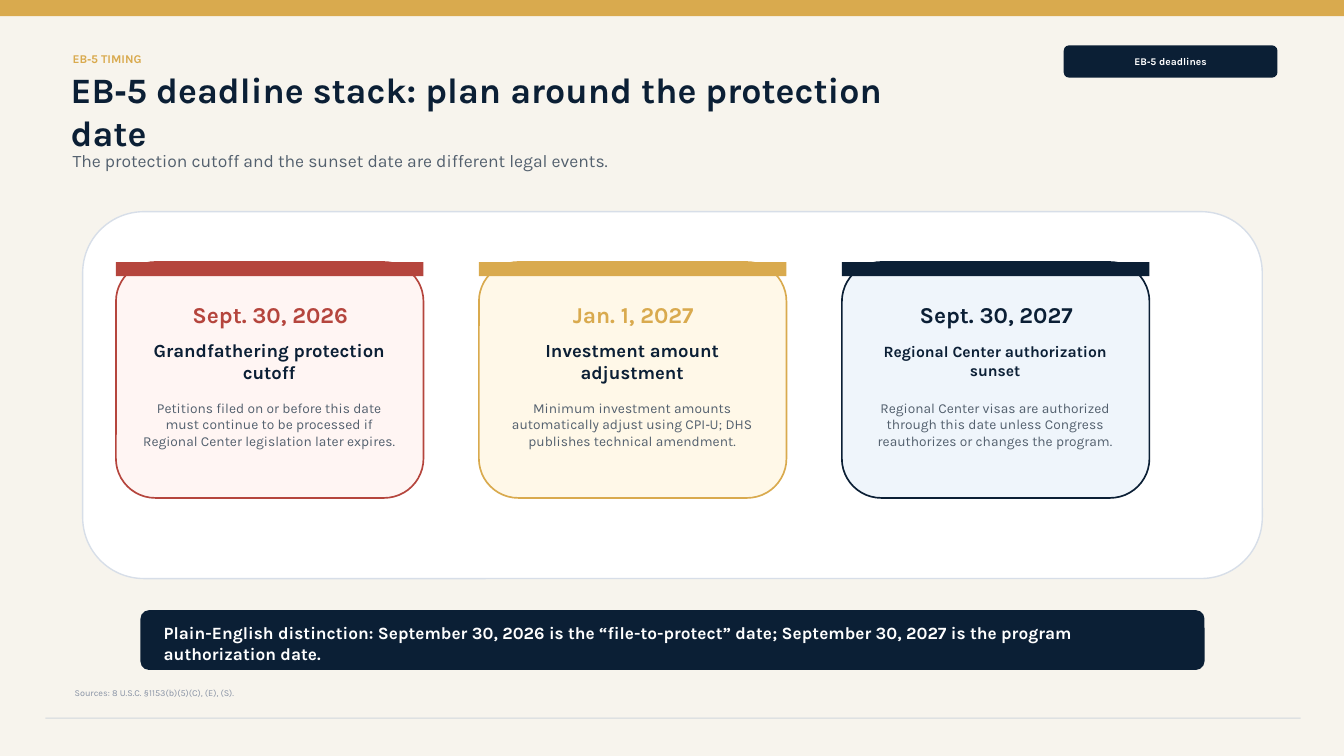
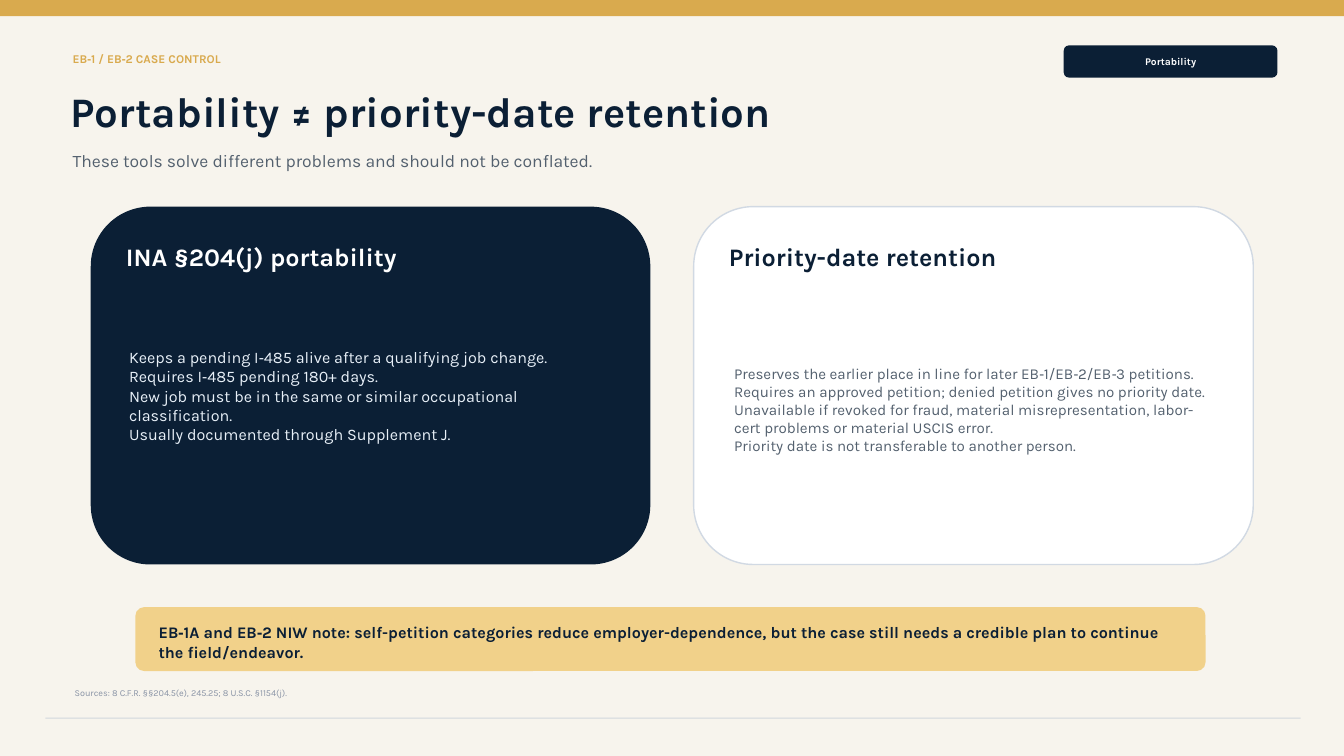
from pptx import Presentation
from pptx.dml.color import RGBColor
from pptx.enum.shapes import MSO_SHAPE as SHAPE
from pptx.enum.text import MSO_ANCHOR as ANCHOR, MSO_AUTO_SIZE as AUTO, PP_ALIGN as ALIGN
from pptx.util import Inches, Pt

FONT = "Karla"
COLORS = {
    "paper": "F7F4ED", "navy": "0B1F35", "gold": "D9AA4E", "red": "B5453D",
    "white": "FFFFFF", "gray": "53606E", "source": "8A94A6", "rule": "D2D7DD",
    "panel_line": "D7DEE8", "card_line": "D1D9E3", "ice": "E8F0F8",
    "blush": "FFF5F3", "cream": "FFF8E8", "mist": "EFF5FB", "sand": "F1D18A",
}


def rgb(name):
    return RGBColor.from_string(COLORS[name])


class Deck:
    def __init__(self):
        self.prs = Presentation()
        self.prs.slide_width = Inches(13.33)
        self.prs.slide_height = Inches(7.5)
        self.s = None

    def set_text(self, sp, text, size, color, bold=False, align=ALIGN.LEFT, insets=(0, 0, 0, 0)):
        """Fill a shape with text; each line becomes a paragraph."""
        tf = sp.text_frame
        tf.auto_size = AUTO.NONE
        tf.word_wrap = True
        tf.vertical_anchor = ANCHOR.MIDDLE
        tf.margin_left, tf.margin_top, tf.margin_right, tf.margin_bottom = map(Inches, insets)
        tf.text = text
        for p in tf.paragraphs:
            p.alignment = align
            for r in p.runs:
                r.font.name = FONT
                r.font.size = Pt(size)
                r.font.bold = bold
                r.font.color.rgb = rgb(color)

    def text(self, x, y, w, h, text, size, color, **style):
        sp = self.s.shapes.add_textbox(Inches(x), Inches(y), Inches(w), Inches(h))
        self.set_text(sp, text, size, color, **style)

    def box(self, x, y, w, h, fill, line=None, weight=1, kind=SHAPE.ROUNDED_RECTANGLE):
        sp = self.s.shapes.add_shape(kind, Inches(x), Inches(y), Inches(w), Inches(h))
        sp.shadow.inherit = False
        sp.fill.solid()
        sp.fill.fore_color.rgb = rgb(fill)
        if line:
            sp.line.color.rgb = rgb(line)
            sp.line.width = Pt(weight)
        else:
            sp.line.fill.background()
        return sp

    def bar(self, x, y, w, h, fill):
        return self.box(x, y, w, h, fill, kind=SHAPE.RECTANGLE)

    def slide(self, kicker, title, title_size, subtitle, tag, sources):
        """Start a slide with the shared header and footer."""
        self.s = self.prs.slides.add_slide(self.prs.slide_layouts[5])
        self.s.background.fill.solid()
        self.s.background.fill.fore_color.rgb = rgb("paper")

        # Header
        self.bar(0, 0, 13.33, 0.16, "gold")
        self.text(0.72, 0.47, 7.6, 0.22, kicker, 8.5, "gold", bold=True)
        sp = self.s.shapes.title
        sp.left, sp.top, sp.width, sp.height = map(Inches, (0.7, 0.82, 8.4, 0.55))
        self.set_text(sp, title, title_size, "navy", bold=True)
        self.text(0.72, 1.42, 9.2, 0.34, subtitle, 12.5, "gray")
        pill = self.box(10.55, 0.45, 2.12, 0.32, "navy")
        self.set_text(pill, tag, 7.3, "white", bold=True, align=ALIGN.CENTER)

        # Footer
        self.text(0.74, 6.78, 11.9, 0.18, sources, 6.5, "source")
        self.bar(0.45, 7.12, 12.45, 0.01, "rule")

    def date_card(self, x, date, heading, heading_size, body, accent, fill):
        y, w = 2.6, 3.05
        self.box(x, y, w, 2.34, fill, accent, 1.2)
        self.bar(x, y, w, 0.14, accent)
        self.text(x + 0.18, y + 0.38, 2.7, 0.28, date, 16.2, accent,
                  bold=True, align=ALIGN.CENTER)
        self.text(x + 0.22, y + 0.85, 2.6, 0.26, heading, heading_size, "navy",
                  bold=True, align=ALIGN.CENTER)
        self.text(x + 0.26, y + 1.28, 2.52, 0.66, body, 9.8, "gray", align=ALIGN.CENTER)

    def topic_card(self, x, heading, points, fill, line, heading_color,
                   body_color, body_size, body_x, body_h):
        y = 2.05
        self.box(x, y, 5.55, 3.55, fill, line)
        self.text(x + 0.35, y + 0.33, 4.8, 0.32, heading, 18, heading_color, bold=True)
        self.text(body_x, y + 0.9, 4.72, body_h, "\n".join(points), body_size, body_color)

    def note(self, x, y, w, h, text, size, fill, color):
        sp = self.box(x, y, w, h, fill, fill)
        sp.adjustments[0] = 0.08 / h
        self.set_text(sp, text, size, color, bold=True, insets=(0.2, 0.06, 0.2, 0))


def deadlines(deck):
    deck.slide("EB‑5 TIMING", "EB‑5 deadline stack: plan around the protection date", 25.5,
               "The protection cutoff and the sunset date are different legal events.",
               "EB‑5 deadlines", "Sources: 8 U.S.C. §1153(b)(5)(C), (E), (S).")
    deck.box(0.82, 2.1, 11.7, 3.64, "white", "panel_line")
    cards = [
        ("Sept. 30, 2026", "Grandfathering protection cutoff", 13.2,
         "Petitions filed on or before this date must continue to be processed if "
         "Regional Center legislation later expires.", "red", "blush"),
        ("Jan. 1, 2027", "Investment amount adjustment", 13.2,
         "Minimum investment amounts automatically adjust using CPI‑U; DHS publishes "
         "technical amendment.", "gold", "cream"),
        ("Sept. 30, 2027", "Regional Center authorization sunset", 11.2,
         "Regional Center visas are authorized through this date unless Congress "
         "reauthorizes or changes the program.", "navy", "mist"),
    ]
    for i, card in enumerate(cards):
        deck.date_card(1.15 + 3.6 * i, *card)
    deck.note(1.4, 6.06, 10.54, 0.58,
              "Plain-English distinction: September 30, 2026 is the “file-to-protect” date; "
              "September 30, 2027 is the program authorization date.", 12.3, "navy", "white")


def portability(deck):
    deck.slide("EB‑1 / EB‑2 CASE CONTROL", "Portability ≠ priority-date retention", 30,
               "These tools solve different problems and should not be conflated.",
               "Portability", "Sources: 8 C.F.R. §§204.5(e), 245.25; 8 U.S.C. §1154(j).")
    deck.topic_card(0.9, "INA §204(j) portability", [
        "Keeps a pending I‑485 alive after a qualifying job change.",
        "Requires I‑485 pending 180+ days.",
        "New job must be in the same or similar occupational classification.",
        "Usually documented through Supplement J.",
    ], "navy", None, "white", "ice", 11.5, body_x=1.28, body_h=1.95)
    deck.topic_card(6.88, "Priority-date retention", [
        "Preserves the earlier place in line for later EB‑1/EB‑2/EB‑3 petitions.",
        "Requires an approved petition; denied petition gives no priority date.",
        "Unavailable if revoked for fraud, material misrepresentation, labor-cert problems "
        "or material USCIS error.",
        "Priority date is not transferable to another person.",
    ], "white", "card_line", "navy", "gray", 10.8, body_x=7.28, body_h=2.22)
    deck.note(1.35, 6.03, 10.6, 0.62,
              "EB‑1A and EB‑2 NIW note: self-petition categories reduce employer-dependence, "
              "but the case still needs a credible plan to continue the field/endeavor.",
              11.5, "sand", "navy")


def main():
    deck = Deck()
    deadlines(deck)
    portability(deck)
    deck.prs.save("out.pptx")


if __name__ == "__main__":
    main()
